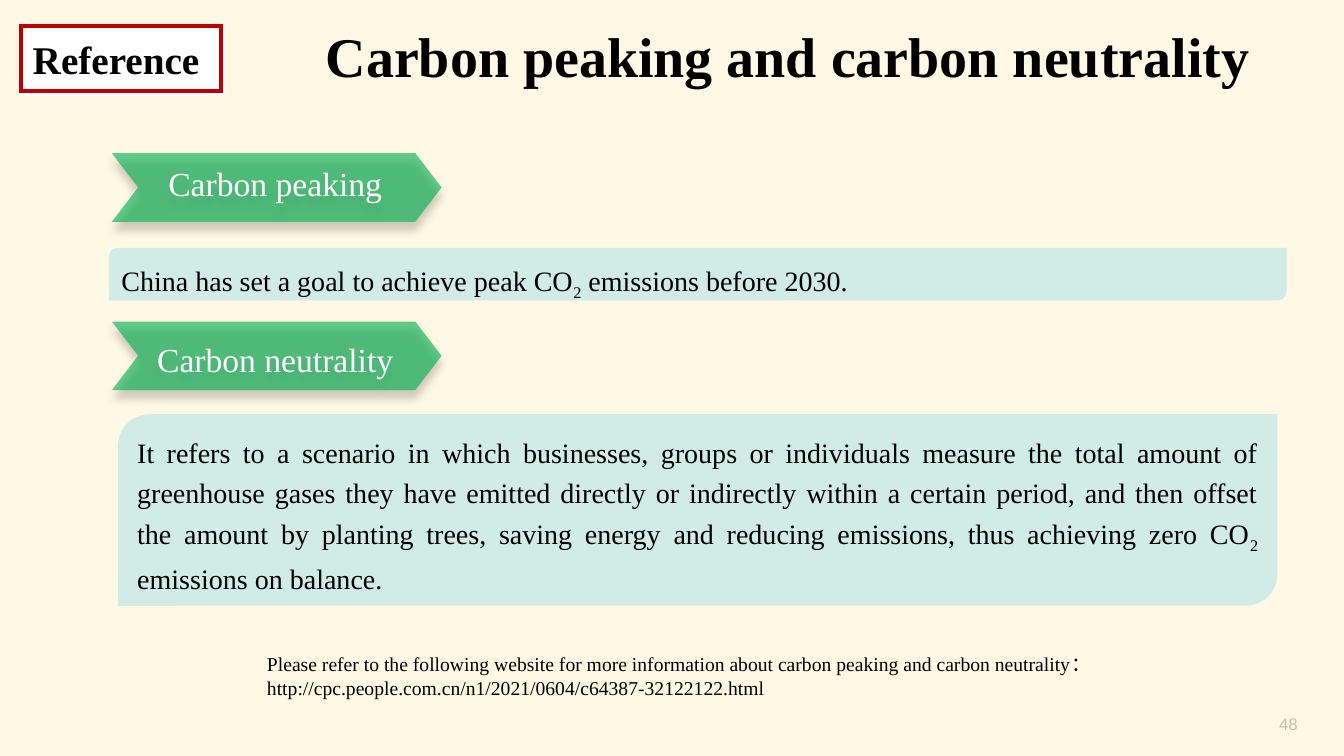
from lxml.etree import SubElement
from pptx import Presentation
from pptx.dml.color import RGBColor
from pptx.enum.shapes import MSO_SHAPE as Shape
from pptx.enum.text import MSO_ANCHOR as Anchor, MSO_AUTO_SIZE as AutoSize, PP_ALIGN as Align
from pptx.oxml.ns import qn
from pptx.util import Inches, Pt

CREAM = RGBColor(0xFF, 0xF2, 0xCC)
BLUE = RGBColor(0x00, 0xB0, 0xF0)
GREEN = RGBColor(0x00, 0xB0, 0x50)
RED = RGBColor(0xC0, 0x00, 0x00)
GREY = RGBColor(0x8C, 0x8C, 0x8C)
BLACK = RGBColor(0x00, 0x00, 0x00)
WHITE = RGBColor(0xFF, 0xFF, 0xFF)
SERIF = "Times New Roman"

TITLE = "Carbon peaking and carbon neutrality"
TAG = "Reference "
PAGE_NUMBER = "48"
SECTIONS = [
    {
        "label": "Carbon peaking",
        "label_top": 1.52,
        "label_inset": 0.1,
        "panel": (1.08, 2.46, 11.68, 0.52),
        "align": Align.LEFT,
        "text": [
            ("China has set a goal to achieve peak CO", False),
            ("2", True),
            (" emissions before 2030.", False),
        ],
    },
    {
        "label": "Carbon neutrality",
        "label_top": 3.19,
        "label_inset": 0.17,
        "panel": (1.17, 4.11, 11.5, 1.9),
        "align": Align.JUSTIFY,
        "text": [
            ("It refers to a scenario in which businesses, groups or individuals "
             "measure the total amount of greenhouse gases they have emitted "
             "directly or indirectly within a certain period, and then offset the "
             "amount by planting trees, saving energy and reducing emissions, "
             "thus achieving zero CO", False),
            ("2", True),
            (" emissions on balance.", False),
        ],
    },
]
FOOTER = [
    "Please refer to the following website for more information about "
    "carbon peaking and carbon neutrality：",
    "http://cpc.people.com.cn/n1/2021/0604/c64387-32122122.html",
]


def add_span(para, text, size, color=BLACK, bold=False, font=SERIF, subscript=False):
    span = para.add_run()
    span.text = text
    span.font.size = Pt(size)
    span.font.name = font
    span.font.bold = bold
    span.font.color.rgb = color
    if subscript:
        span.font._element.set("baseline", "-25000")


def add_block(page, kind, place, fill, opacity=100, anchor=Anchor.TOP):
    block = page.shapes.add_shape(kind, *map(Inches, place))
    block.shadow.inherit = False
    block.fill.solid()
    block.fill.fore_color.rgb = fill
    if opacity < 100:
        tint = block._element.spPr.find(qn("a:solidFill")).find(qn("a:srgbClr"))
        SubElement(tint, qn("a:alpha"), val=str(opacity * 1000))
    block.line.fill.background()
    block.text_frame.word_wrap = True
    block.text_frame.vertical_anchor = anchor
    return block


def add_text_box(page, place, lines, size, align=Align.LEFT, anchor=Anchor.TOP, **style):
    frame = page.shapes.add_textbox(*map(Inches, place)).text_frame
    frame.word_wrap = True
    frame.vertical_anchor = anchor
    for index, line in enumerate(lines):
        para = frame.add_paragraph() if index else frame.paragraphs[0]
        para.alignment = align
        add_span(para, line, size, **style)


def cast_shadow(block, color, opacity, blur, distance, angle):
    effects = block._element.spPr.find(qn("a:effectLst"))
    shadow = SubElement(effects, qn("a:outerShdw"), blurRad=str(Pt(blur)),
                        dist=str(Pt(distance)), dir=str(angle * 60000),
                        algn="t", rotWithShape="0")
    tint = SubElement(shadow, qn("a:srgbClr"), val=str(color))
    SubElement(tint, qn("a:alpha"), val=str(opacity * 1000))


def add_section(page, section):
    place = (1.11, section["label_top"], 3.27, 0.68)
    chevron = add_block(page, Shape.CHEVRON, place, GREEN, 62)
    chevron.adjustments[0] = 0.383
    cast_shadow(chevron, BLACK, 30, 6, 6, 90)
    frame = chevron.text_frame
    frame.margin_left = frame.margin_bottom = 0
    frame.margin_right = Inches(0.03)
    frame.margin_top = Inches(section["label_inset"])
    para = frame.paragraphs[0]
    para.alignment = Align.CENTER
    add_span(para, section["label"], 24, WHITE)

    panel = add_block(page, Shape.ROUND_2_DIAG_RECTANGLE, section["panel"], BLUE, 18)
    panel.text_frame.margin_bottom = 0
    para = panel.text_frame.paragraphs[0]
    para.alignment = section["align"]
    para.line_spacing = 1.2
    for text, subscript in section["text"]:
        add_span(para, text, 20, subscript=subscript)


def add_title(page):
    title = page.shapes.title
    title.left, title.top, title.width, title.height = map(Inches, (1.95, 0.16, 11.72, 0.77))
    frame = title.text_frame
    frame.word_wrap = True
    frame.auto_size = AutoSize.NONE
    frame.vertical_anchor = Anchor.TOP
    para = frame.paragraphs[0]
    para.alignment = Align.CENTER
    add_span(para, TITLE, 40, bold=True)
    page.shapes._spTree.append(title._element)


def add_tag(page):
    place = (0.21, 0.26, 1.98, 0.64)
    tag = add_block(page, Shape.RECTANGLE, place, WHITE, anchor=Anchor.MIDDLE)
    tag.line.color.rgb = RED
    tag.line.width = Pt(3)
    SubElement(tag._element.spPr.find(qn("a:ln")), qn("a:miter"), lim="800000")
    cast_shadow(tag, WHITE, 100, 0, 3, 45)
    para = tag.text_frame.paragraphs[0]
    para.alignment = Align.CENTER
    add_span(para, TAG, 28, bold=True)


def main():
    deck = Presentation()
    deck.slide_width, deck.slide_height = Inches(13.33), Inches(7.5)
    page = deck.slides.add_slide(deck.slide_layouts[5])
    page.background.fill.solid()
    page.background.fill.fore_color.rgb = WHITE
    add_text_box(page, (9.97, 6.98, 3, 0.4), [PAGE_NUMBER], 12, Align.RIGHT,
                 Anchor.MIDDLE, color=GREY, font="Arial")
    add_block(page, Shape.RECTANGLE, (0, 0, 13.33, 7.5), CREAM, 50)
    for section in SECTIONS:
        add_section(page, section)
    add_title(page)
    add_text_box(page, (2.55, 6.42, 10.5, 0.57), FOOTER, 14)
    add_tag(page)
    deck.save("out.pptx")


if __name__ == "__main__":
    main()
